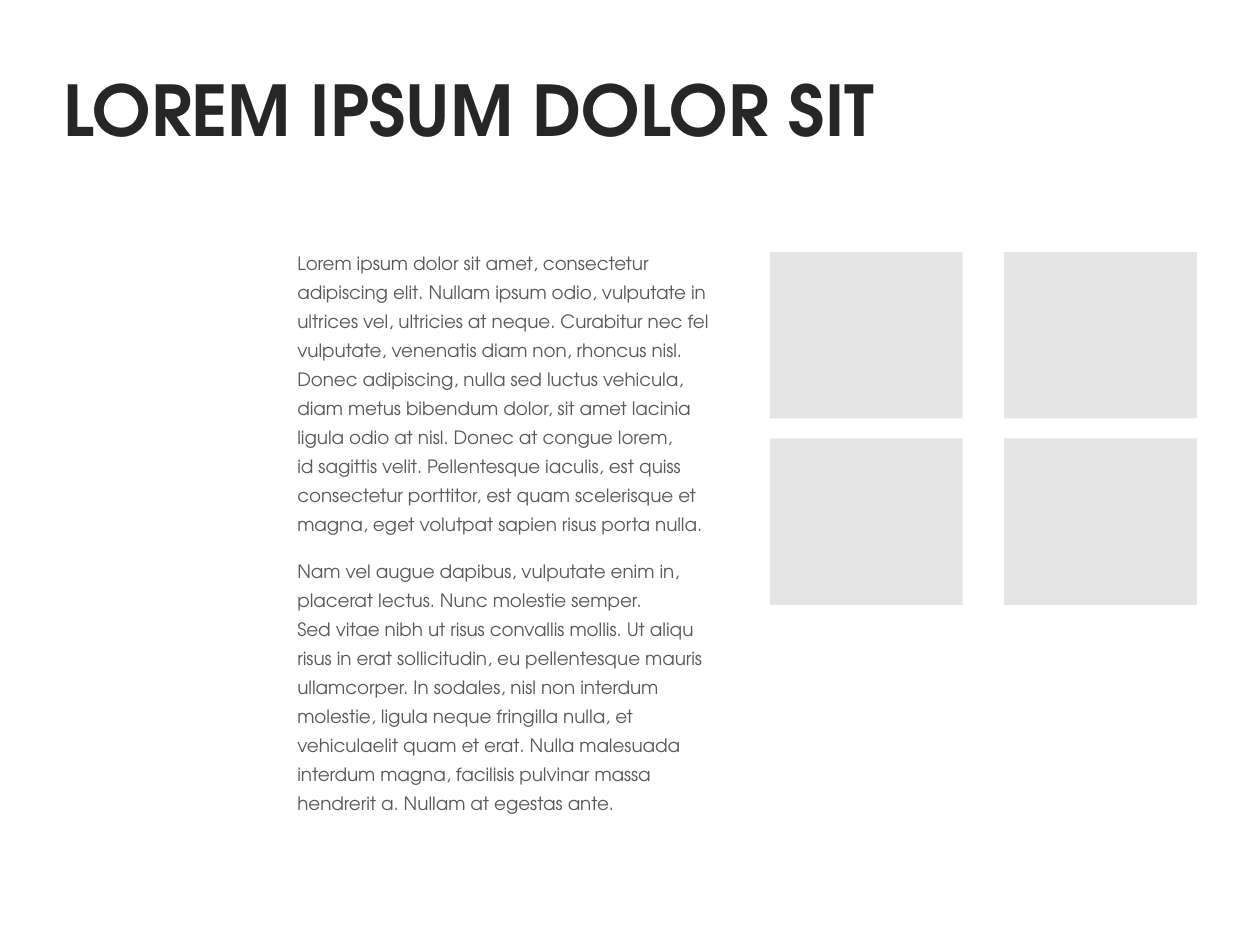
"""Build a slide with a title, two text paragraphs and a two by two grid of panels."""
from pptx import Presentation
from pptx.dml.color import RGBColor
from pptx.enum.shapes import MSO_SHAPE
from pptx.enum.text import MSO_ANCHOR, MSO_AUTO_SIZE, PP_ALIGN
from pptx.util import Inches, Pt

RECTANGLE = MSO_SHAPE.RECTANGLE
TOP = MSO_ANCHOR.TOP
NO_AUTOFIT = MSO_AUTO_SIZE.NONE
LEFT = PP_ALIGN.LEFT
TITLE_ONLY = 5

TITLE = "LOREM IPSUM DOLOR SIT"
BODY = [
    [
        "Lorem ipsum dolor sit amet, consectetur",
        "adipiscing elit. Nullam ipsum odio, vulputate in",
        "ultrices vel, ultricies at neque. Curabitur nec fel",
        "vulputate, venenatis diam non, rhoncus nisl.",
        "Donec adipiscing, nulla sed luctus vehicula,",
        "diam metus bibendum dolor, sit amet lacinia",
        "ligula odio at nisl. Donec at congue lorem,",
        "id sagittis velit. Pellentesque iaculis, est quiss",
        "consectetur porttitor, est quam scelerisque et",
        "magna, eget volutpat sapien risus porta nulla.",
    ],
    [
        "Nam vel augue dapibus, vulputate enim in,",
        "placerat lectus. Nunc molestie semper.",
        "Sed vitae nibh ut risus convallis mollis. Ut aliqu",
        "risus in erat sollicitudin, eu pellentesque mauris",
        "ullamcorper. In sodales, nisl non interdum",
        "molestie, ligula neque fringilla nulla, et",
        "vehiculaelit quam et erat. Nulla malesuada",
        "interdum magna, facilisis pulvinar massa",
        "hendrerit a. Nullam at egestas ante.",
    ],
]
COLORS = {"title": "262626", "body": "595959", "panel": "E5E5E5"}
FONT = "TeX Gyre Adventor"

WIDTH, HEIGHT = 10, 7.5
MARGIN = 0.5
CONTENT_TOP = 2
COLUMN_PITCH = 1.86
COLUMN_WIDTH = 1.53
ROW_PITCH = 1.48
ROW_HEIGHT = 1.32
ROWS = 2
TEXT_COLUMN = 1
PANEL_COLUMNS = (3, 4)


def column_left(column):
    return WIDTH - MARGIN - COLUMN_WIDTH - (PANEL_COLUMNS[-1] - column) * COLUMN_PITCH


def place(shape, left, top, width, height):
    shape.left, shape.top = Inches(left), Inches(top)
    shape.width, shape.height = Inches(width), Inches(height)


def prepare_frame(text_frame):
    text_frame.margin_left = text_frame.margin_right = 0
    text_frame.margin_top = text_frame.margin_bottom = 0
    text_frame.word_wrap = True
    text_frame.auto_size = NO_AUTOFIT
    text_frame.vertical_anchor = TOP


def format_paragraph(paragraph, size, color, bold=False, space_before=0):
    paragraph.alignment = LEFT
    paragraph.space_before = Pt(space_before)
    paragraph.space_after = Pt(4)
    for run in paragraph.runs:
        run.font.name = FONT
        run.font.size = Pt(size)
        run.font.bold = bold
        run.font.color.rgb = RGBColor.from_string(COLORS[color])


def add_title(slide):
    title = slide.shapes.title
    place(title, MARGIN, 0.53, 7.12, 0.58)
    prepare_frame(title.text_frame)
    title.text_frame.text = TITLE
    format_paragraph(title.text_frame.paragraphs[0], 40, "title", bold=True)


def add_body(slide):
    box = slide.shapes.add_textbox(0, 0, 0, 0)
    place(box, column_left(TEXT_COLUMN) - 0.03, CONTENT_TOP, 3.41, 5.01)
    text_frame = box.text_frame
    prepare_frame(text_frame)
    text_frame.text = "\n".join(line for block in BODY for line in block)
    for index, paragraph in enumerate(text_frame.paragraphs):
        gap = 10 if index == len(BODY[0]) else 0
        format_paragraph(paragraph, 10.5, "body", space_before=gap)


def add_panels(slide):
    for row in range(ROWS):
        for column in PANEL_COLUMNS:
            panel = slide.shapes.add_shape(RECTANGLE, 0, 0, 0, 0)
            place(panel, column_left(column), CONTENT_TOP + row * ROW_PITCH,
                  COLUMN_WIDTH, ROW_HEIGHT)
            panel.shadow.inherit = False
            panel.fill.solid()
            panel.fill.fore_color.rgb = RGBColor.from_string(COLORS["panel"])
            panel.line.fill.background()


def main():
    presentation = Presentation()
    presentation.slide_width, presentation.slide_height = Inches(WIDTH), Inches(HEIGHT)
    slide = presentation.slides.add_slide(presentation.slide_layouts[TITLE_ONLY])
    add_title(slide)
    add_body(slide)
    add_panels(slide)
    presentation.save("out.pptx")


if __name__ == "__main__":
    main()
